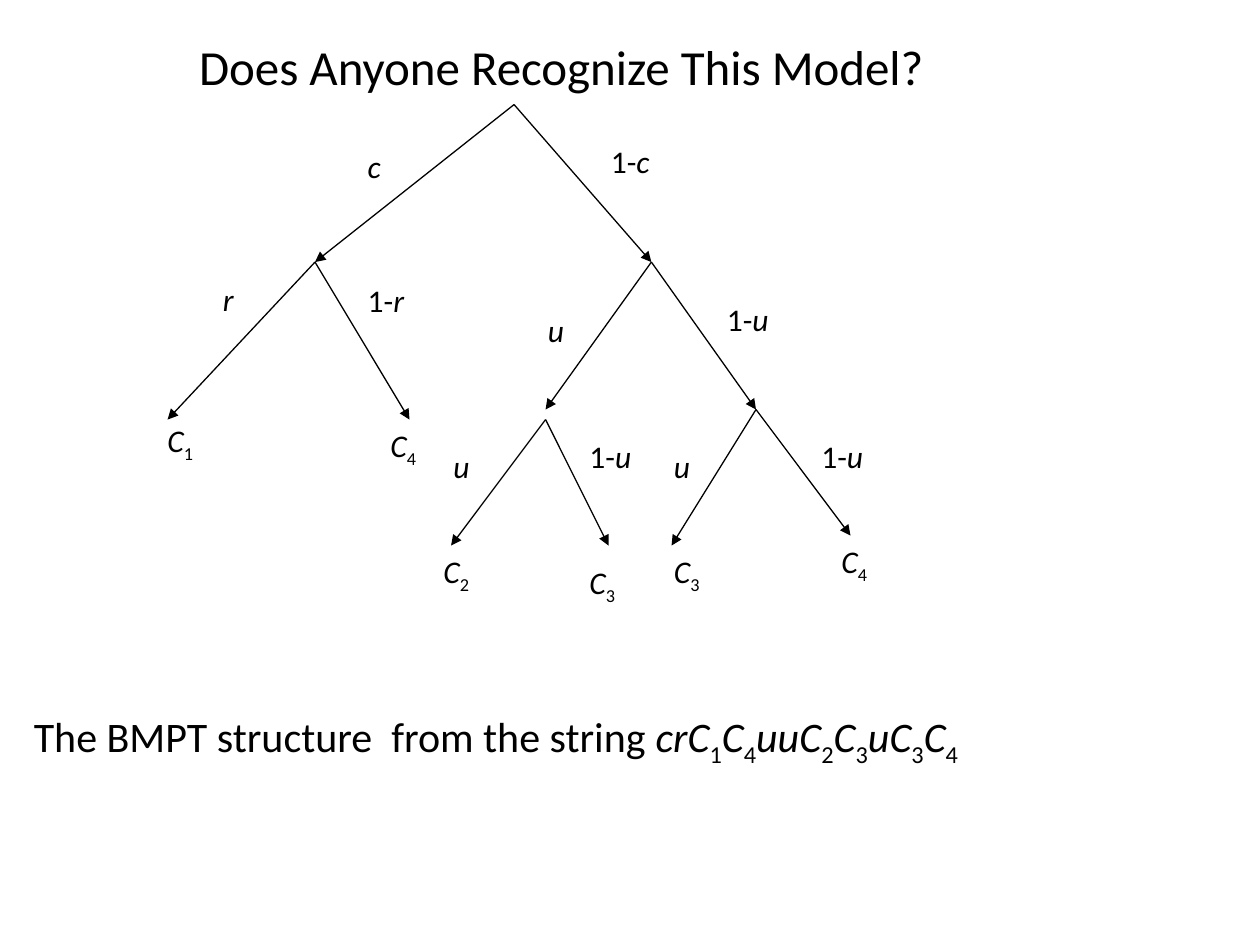
from itertools import groupby

from lxml import etree
from pptx import Presentation
from pptx.dml.color import RGBColor
from pptx.enum.shapes import MSO_CONNECTOR
from pptx.enum.text import MSO_ANCHOR, MSO_AUTO_SIZE, PP_ALIGN
from pptx.oxml.ns import qn
from pptx.util import Inches, Pt

COLORS = {"ink": "000000"}
INK = RGBColor.from_string(COLORS["ink"])
LABEL_HEIGHT = 0.4


def add_run(p, text, size, italic=False, subscript=False):
    r = p.add_run()
    r.text = text
    font = {"name": "Calibri", "size": Pt(size), "italic": italic, "bold": False}
    for name, value in font.items():
        setattr(r.font, name, value)
    r.font.color.rgb = INK
    if subscript:
        r._r.get_or_add_rPr().set("baseline", "-25000")


def add_formula(s, box, plain, symbols, size, wrap=False):
    """Upright text, then italic symbols whose digits are subscripts."""
    tf = s.shapes.add_textbox(*map(Inches, box)).text_frame
    tf.word_wrap = wrap
    p = tf.paragraphs[0]
    if plain:
        add_run(p, plain, size)
    for is_digit, chars in groupby(symbols, str.isdigit):
        add_run(p, "".join(chars), size, italic=not is_digit, subscript=is_digit)


prs = Presentation()
prs.slide_width, prs.slide_height = Inches(10), Inches(7.5)
s = prs.slides.add_slide(prs.slide_layouts[5])

# Title
title = s.shapes.title
title.left, title.top = Inches(1.48), Inches(0.24)
title.width, title.height = Inches(6.72), Inches(0.57)
tf = title.text_frame
frame = {"word_wrap": False, "auto_size": MSO_AUTO_SIZE.NONE,
         "vertical_anchor": MSO_ANCHOR.TOP}
for name, value in frame.items():
    setattr(tf, name, value)
p = tf.paragraphs[0]
p.alignment = PP_ALIGN.LEFT
add_run(p, "Does Anyone Recognize This Model?", 28)

# Branches: each parent point with its two child points
branches = [
    ((4.08, 0.83), (2.5, 2.08), (5.17, 2.08)),
    ((2.5, 2.08), (1.33, 3.33), (3.25, 3.33)),
    ((5.17, 2.08), (4.33, 3.25), (6, 3.25)),
    ((4.33, 3.33), (3.58, 4.33), (4.83, 4.33)),
    ((6, 3.25), (5.33, 4.33), (6.75, 4.25)),
]
for parent, *children in branches:
    for child in children:
        arrow = s.shapes.add_connector(
            MSO_CONNECTOR.STRAIGHT, *map(Inches, parent + child))
        arrow.line.color.rgb = INK
        arrow.line.width = Pt(0.75)
        etree.SubElement(arrow.line._get_or_add_ln(), qn("a:tailEnd"), type="triangle")
        etree.SubElement(arrow._element.spPr, qn("a:effectLst"))

# Labels: box width, upright prefix, then (symbols, left, top)
label_groups = [
    (0.47, "", [("C1", 1.23, 3.29), ("C4", 3, 3.33), ("C2", 3.42, 4.33),
                ("C3", 4.58, 4.42), ("C3", 5.25, 4.33), ("C4", 6.58, 4.25)]),
    (0.33, "", [("c", 2.82, 1.12), ("u", 4.25, 2.42),
                ("u", 3.5, 3.5), ("u", 5.25, 3.5)]),
    (0.28, "", [("r", 1.67, 2.17)]),
    (0.55, "1-", [("c", 4.75, 1.08), ("r", 2.82, 2.18), ("u", 5.67, 2.33),
                  ("u", 4.58, 3.42), ("u", 6.42, 3.42)]),
]
for width, prefix, labels in label_groups:
    for symbols, left, top in labels:
        add_formula(s, (left, top, width, LABEL_HEIGHT), prefix, symbols, 18)

# Caption
add_formula(s, (0.17, 5.59, 9.83, 0.5), "The BMPT structure  from the string ",
            "crC1C4uuC2C3uC3C4", 24, wrap=True)

prs.save("out.pptx")
